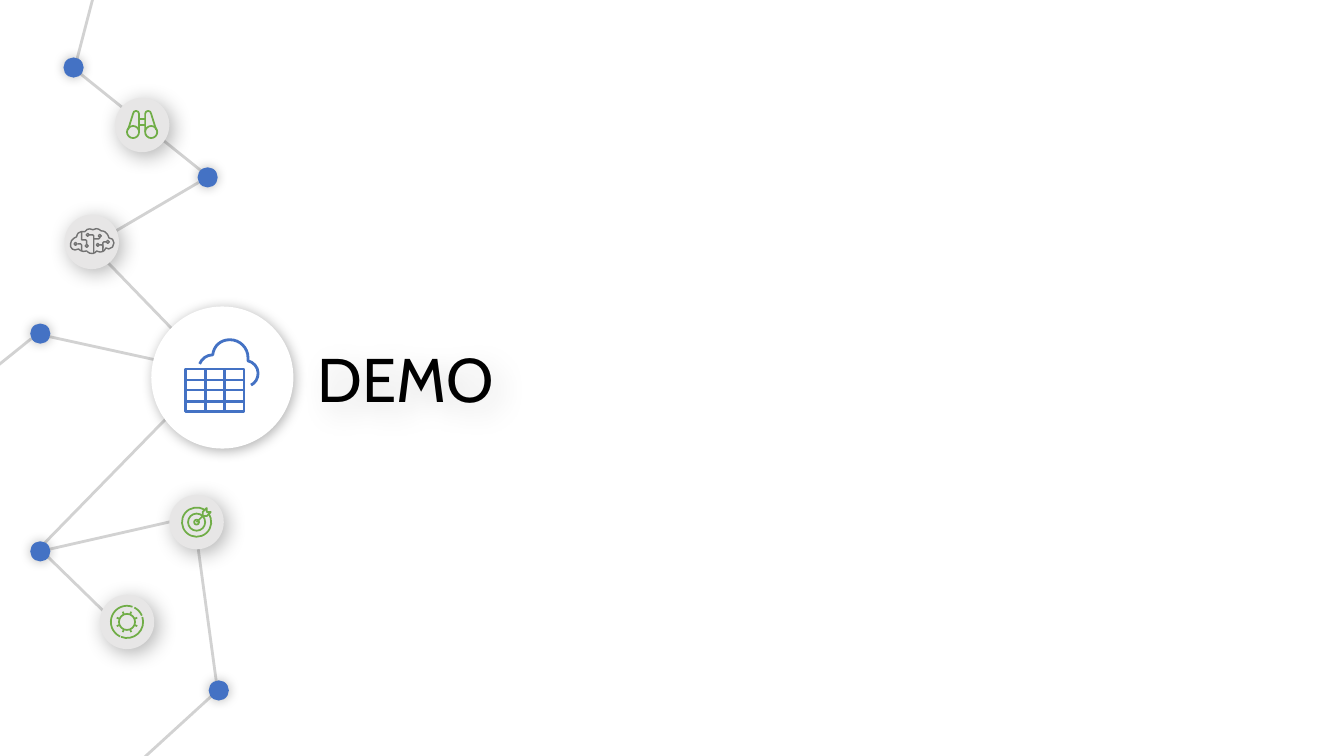
from math import ceil, cos, radians, sin, tan

from lxml import etree
from pptx import Presentation
from pptx.dml.color import RGBColor
from pptx.enum.shapes import MSO_CONNECTOR, MSO_SHAPE
from pptx.enum.text import MSO_ANCHOR, MSO_AUTO_SIZE, PP_ALIGN
from pptx.oxml.ns import qn
from pptx.util import Pt

PX = 9144  # 100 px to the inch
STRAIGHT = MSO_CONNECTOR.STRAIGHT
OVAL, RECTANGLE = MSO_SHAPE.OVAL, MSO_SHAPE.RECTANGLE
LEFT_SIDE, RIGHT_SIDE = 1, 3
TITLE_ONLY = 5

BLACK = RGBColor(0x00, 0x00, 0x00)
WHITE = RGBColor(0xFF, 0xFF, 0xFF)
LINK_GREY = RGBColor(0xD2, 0xD2, 0xD2)
BADGE_GREY = RGBColor(0xE7, 0xE6, 0xE6)
BRAIN_GREY = RGBColor(0x73, 0x73, 0x73)
BLUE = RGBColor(0x44, 0x72, 0xC4)
GREEN = RGBColor(0x70, 0xAD, 0x47)

# Shadows: opacity %, blur pt, distance pt, angle in degrees
BADGE_SHADOW = (30, 15, 4, 45)
NODE_SHADOW = (27, 8, 0, 0)
HUB_SHADOW = (30, 9, 2, 45)
TITLE_SHADOW = (15, 20, 8, 45)

LINKS = [
    (31, 336, -10, 369), (218, 683, 125, 768), (193, 518, 217, 694),
    (91, 244, 209, 366), (44, 549, 128, 631), (44, 546, 185, 514),
    (209, 370, 44, 539), (197, 181, 93, 242), (77, 71, 204, 173),
    (75, 64, 93, -5),
]
HUB_LINK = (209, 369, 49, 334)
NODE_CENTERS = [(206, 176), (217, 685), (73, 67), (40, 547), (40, 331)]

# Chains of cubic curves: a start, then two controls and an end for each
CLOUD = [
    (198, 361), (200, 356), (205, 352), (211, 352), (211, 352), (211, 352),
    (211, 352), (212, 343), (219, 337), (228, 337), (238, 337), (246, 345),
    (246, 355), (246, 356), (246, 357), (246, 358), (251, 359), (256, 364),
    (256, 370), (256, 376), (253, 380), (249, 382),
]
BRAIN_OUTLINE = [
    (105, 246), (106, 246), (107, 247), (108, 247), (111, 247), (113, 244),
    (113, 241), (113, 238), (111, 236), (108, 236), (108, 236), (107, 229),
    (100, 229), (100, 229), (97, 225), (92, 228), (92, 228), (87, 225),
    (84, 230), (84, 230), (77, 228), (76, 235), (76, 235), (70, 237),
    (70, 242), (69, 246), (73, 250), (78, 247), (78, 247), (81, 251),
    (86, 249), (86, 249), (91, 255), (96, 249), (96, 249), (102, 253),
    (105, 246),
]
BRAIN_DOTS = [(107, 240), (97, 243), (87, 233), (99, 234), (86, 244), (75, 242)]
BRAIN_TRACES = [
    [(81, 249), (81, 243), (80, 242), (77, 242)],
    [(93, 251), (93, 234), (92, 233), (88, 233)],
    [(93, 237), (98, 237), (99, 236), (99, 235)],
    [(81, 230), (81, 238), (85, 238), (86, 239), (86, 242)],
    [(105, 240), (103, 240), (102, 241), (102, 246)],
    [(102, 249), (102, 244), (101, 243), (99, 243)],
]


def polar(x, y, radius, angle):
    return x + radius * cos(radians(angle)), y + radius * sin(radians(angle))


def arc(x, y, radius, start=0, end=360):
    """A circular arc as cubic curves of at most a quarter turn."""
    count = ceil(abs(end - start) / 90)
    turn = (end - start) / count
    pull = 4 / 3 * tan(radians(turn / 4)) * radius
    chain = [polar(x, y, radius, start)]
    for i in range(count):
        a, b = start + turn * i, start + turn * (i + 1)
        stop = polar(x, y, radius, b)
        chain += [polar(*chain[-1], pull, a + 90), polar(*stop, pull, b - 90), stop]
    return chain


def straight(first, *others):
    """Straight segments as flat cubic curves."""
    return [first] + [point for point in others for _ in range(3)]


def set_shadow(shape, opacity, blur, distance, angle):
    shape.shadow.inherit = False
    effects = shape._element.spPr.find(qn("a:effectLst"))
    outer = etree.SubElement(effects, qn("a:outerShdw"), blurRad=str(Pt(blur)),
                             dist=str(Pt(distance)), dir=str(angle * 60000),
                             algn="ctr", rotWithShape="0")
    color = etree.SubElement(outer, qn("a:srgbClr"), val=str(BLACK))
    etree.SubElement(color, qn("a:alpha"), val=str(opacity * 1000))


def add_line(shapes, x1, y1, x2, y2, color):
    line = shapes.add_connector(STRAIGHT, x1 * PX, y1 * PX, x2 * PX, y2 * PX)
    line.line.color.rgb = color
    line.line.width = Pt(2)
    etree.SubElement(line._element.spPr, qn("a:effectLst"))
    return line


def add_disc(shapes, center, diameter, color, shadow):
    x, y = center
    disc = shapes.add_shape(OVAL, (x - diameter // 2) * PX, (y - diameter // 2) * PX,
                            diameter * PX, diameter * PX)
    disc.fill.solid()
    disc.fill.fore_color.rgb = color
    disc.line.fill.background()
    set_shadow(disc, *shadow)


def outline_only(shape, color, width):
    shape.fill.background()
    shape.line.color.rgb = color
    shape.line.width = Pt(width)
    shape.shadow.inherit = False


def add_icon(shapes, strokes, color, width):
    strokes = [[(round(x * PX), round(y * PX)) for x, y in s] for s in strokes]
    builder = shapes.build_freeform(*strokes[0][0], scale=1.0)
    for i, stroke in enumerate(strokes):
        if i:
            builder.move_to(*stroke[0])
        builder.add_line_segments(stroke[1:], close=stroke[0] == stroke[-1])
    icon = builder.convert_to_shape()
    outline_only(icon, color, width)
    # Every three points become one cubic curve
    steps = list(icon._element.iter(qn("a:lnTo")))
    for i in range(0, len(steps), 3):
        curve = etree.Element(qn("a:cubicBezTo"))
        steps[i].addprevious(curve)
        for step in steps[i:i + 3]:
            curve.append(step[0])
            step.getparent().remove(step)


def gear_strokes(x, y):
    rings = [arc(x, y, 8)] + [arc(x, y, 16, a, b)
                              for a, b in ((-70, -245), (112, -18), (-23, -63))]
    teeth = [straight(polar(x, y, 11, a), polar(x, y, 8, a))
             for a in (22.5 + 45 * i for i in range(8))]
    return rings + teeth


def target_strokes(x, y):
    tip = (x + 6, y - 6)
    feathers = straight((x + 14, y - 10), (x + 10, y - 10), (x + 10, y - 14),
                        (x + 6, y - 10), tip, (x + 10, y - 6), (x + 14, y - 10))
    return [arc(x, y, 14.5, -37, 304), arc(x, y, 8.5), arc(x, y, 2.5),
            straight((x, y), tip), feathers]


def binocular_strokes(x, y):
    lenses = [arc(x + side * 9, y + 7, 6) for side in (-1, 1)]
    tubes = []
    for side in (-1, 1):
        top = arc(x + side * 6, y - 11, 3, 0, -180)
        if side > 0:
            top.reverse()
        inner, outer = (x + side * 3, y + 7), (x + side * 14, y + 5)
        tubes.append(straight(inner, top[0]) + top[1:] + straight(top[-1], outer)[1:])
    bridges = [straight((x - 3, y + drop), (x + 3, y + drop)) for drop in (-6, 0)]
    return lenses + tubes + bridges


def brain_strokes():
    dots = [arc(x, y, 1.5) for x, y in BRAIN_DOTS]
    return [BRAIN_OUTLINE] + dots + [straight(*trace) for trace in BRAIN_TRACES]


def add_badge(shapes, center, strokes, color, width):
    badge = shapes.add_group_shape().shapes
    add_disc(badge, center, 54, BADGE_GREY, BADGE_SHADOW)
    add_icon(badge, strokes, color, width)


def add_hub(shapes):
    hub = shapes.add_group_shape().shapes
    add_disc(hub, (220, 374), 141, WHITE, HUB_SHADOW)
    left, top, right, bottom = 184, 366, 242, 408
    grid = hub.add_shape(RECTANGLE, left * PX, top * PX,
                         (right - left) * PX, (bottom - top) * PX)
    outline_only(grid, BLUE, 2)
    for x in (204, 223):
        add_line(hub, x, top, x, bottom, BLUE)
    row_lines = [add_line(hub, left, y, right, y, BLUE) for y in (377, 387, 398)]
    row_lines[1].begin_connect(grid, LEFT_SIDE)
    row_lines[1].end_connect(grid, RIGHT_SIDE)
    add_icon(hub, [CLOUD], BLUE, 2)


def set_title(title, wording):
    title.left, title.top, title.width, title.height = (
        v * PX for v in (305, 328, 556, 94))
    frame = title.text_frame
    frame.word_wrap = True
    frame.auto_size = MSO_AUTO_SIZE.SHAPE_TO_FIT_TEXT
    frame.vertical_anchor = MSO_ANCHOR.MIDDLE
    frame.margin_left = frame.margin_right = 10 * PX
    frame.margin_top = frame.margin_bottom = 10 * PX
    paragraph = frame.paragraphs[0]
    paragraph.alignment = PP_ALIGN.LEFT
    run = paragraph.add_run()
    run.text = wording
    run.font.name = "Cabin"
    run.font.size = Pt(44)
    run.font.color.rgb = BLACK
    set_shadow(title, *TITLE_SHADOW)


def main():
    deck = Presentation()
    deck.slide_width, deck.slide_height = 1333 * PX, 750 * PX
    shapes = deck.slides.add_slide(deck.slide_layouts[TITLE_ONLY]).shapes
    set_title(shapes.title, "DEMO")

    # Network of links
    for link in LINKS:
        add_line(shapes, *link, LINK_GREY)
    hub_link = add_line(shapes, *HUB_LINK, LINK_GREY)
    etree.SubElement(hub_link._element.spPr.find(qn("a:ln")), qn("a:headEnd"), type="oval")

    # Badges with icons
    for center, strokes in (((126, 617), gear_strokes), ((195, 518), target_strokes),
                            ((141, 124), binocular_strokes)):
        add_badge(shapes, center, strokes(*center), GREEN, 1.25)
    add_badge(shapes, (91, 240), brain_strokes(), BRAIN_GREY, 1)

    # Nodes, then the hub
    for center in NODE_CENTERS:
        add_disc(shapes, center, 20, BLUE, NODE_SHADOW)
    add_hub(shapes)
    deck.save("out.pptx")


if __name__ == "__main__":
    main()
